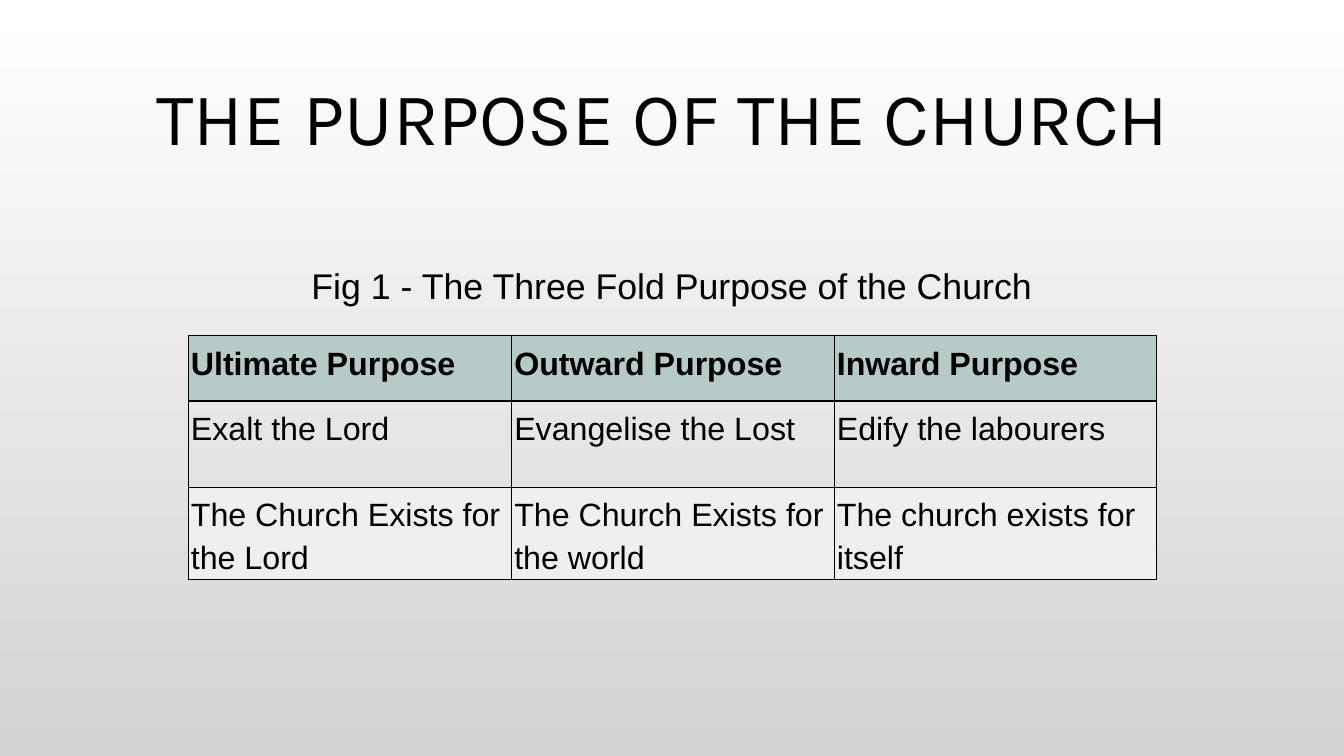
from dataclasses import dataclass

from lxml import etree
from pptx import Presentation
from pptx.dml.color import RGBColor
from pptx.enum import text
from pptx.oxml import ns
from pptx.util import Cm, Pt


@dataclass(frozen=True)
class Theme:
    ink: str = "000000"
    top: str = "FFFFFF"
    bottom: str = "D3D3D3"
    header: str = "B6CAC7"
    pale: str = "EFEFEF"
    title_font: str = "Karla"
    body_font: str = "Arial"
    title_size: float = 106.4
    caption_size: float = 51
    cell_size: float = 46
    thin: float = 1
    thick: float = 3


THEME = Theme()
INSET = Cm(0.15)
COLUMN_WIDTHS = (16.3, 16.26, 16.23)
ROW_HEIGHTS = (4.85, 3.3, 4.34, 0.76)  # the last row grows to fit its text
CAPTION = "Fig 1 - The Three Fold Purpose of the Church"
# Each row: texts, fill, bold, top border, bottom border
PURPOSES = (
    (("Ultimate Purpose", "Outward Purpose", "Inward Purpose"),
     THEME.header, True, THEME.thin, THEME.thick),
    (("Exalt the Lord", "Evangelise the Lost", "Edify the labourers"),
     None, False, THEME.thick, THEME.thin),
    (("The Church Exists for the Lord", "The Church Exists for the world",
      "The church exists for itself"),
     THEME.pale, False, THEME.thin, THEME.thin),
)


def write(frame, words, *, size, font=THEME.body_font, bold=False,
          align=text.PP_ALIGN.LEFT, spacing=1.0, before=0):
    para = frame.paragraphs[0]
    para.alignment = align
    para.line_spacing = spacing
    para.space_before = Pt(before)
    span = para.add_run()
    span.text = words
    span.font.name = font
    span.font.size = Pt(size)
    span.font.bold = bold
    span.font.color.rgb = RGBColor.from_string(THEME.ink)


def set_insets(item):
    item.margin_left = item.margin_right = INSET
    item.margin_top = item.margin_bottom = INSET


def set_borders(cell, *, left=0, right=0, top=0, bottom=0):
    """Border widths are in points; zero means no line."""
    properties = cell._tc.get_or_add_tcPr()
    sides = (("L", left), ("R", right), ("T", top), ("B", bottom))
    for index, (side, width) in enumerate(sides):
        line = etree.Element(ns.qn(f"a:ln{side}"), w=str(Pt(width)))
        if width:
            fill = etree.SubElement(line, ns.qn("a:solidFill"))
            etree.SubElement(fill, ns.qn("a:srgbClr"), val=THEME.ink)
        else:
            etree.SubElement(line, ns.qn("a:noFill"))
        properties.insert(index, line)


def set_fill(cell, color):
    if color:
        cell.fill.solid()
        cell.fill.fore_color.rgb = RGBColor.from_string(color)
    else:
        cell.fill.background()


def paint_background(page):
    fill = page.background.fill
    fill.gradient()
    fill.gradient_angle = 270
    for stop, color in zip(fill.gradient_stops, (THEME.top, THEME.bottom)):
        stop.color.rgb = RGBColor.from_string(color)


def add_title(page, words):
    box = page.shapes.title
    box.left, box.top, box.width, box.height = Cm(4.7), Cm(2.64), Cm(58.34), Cm(6.35)
    frame = box.text_frame
    frame.auto_size = text.MSO_AUTO_SIZE.NONE
    frame.word_wrap = True
    frame.vertical_anchor = text.MSO_ANCHOR.MIDDLE
    set_insets(frame)
    write(frame, words, size=THEME.title_size, font=THEME.title_font,
          align=text.PP_ALIGN.CENTER)


def add_purpose_table(page):
    table = page.shapes.add_table(
        len(ROW_HEIGHTS), len(COLUMN_WIDTHS), Cm(9.47), Cm(12.07),
        Cm(sum(COLUMN_WIDTHS)), Cm(sum(ROW_HEIGHTS))).table
    table.first_row = table.horz_banding = False
    for column, width in zip(table.columns, COLUMN_WIDTHS):
        column.width = Cm(width)
    for row, height in zip(table.rows, ROW_HEIGHTS):
        row.height = Cm(height)

    # Caption across the first row
    for cell in table.rows[0].cells:
        set_insets(cell)
        set_fill(cell, None)
        set_borders(cell, bottom=THEME.thin)
    caption = table.cell(0, 0)
    caption.merge(table.cell(0, len(COLUMN_WIDTHS) - 1))
    caption.vertical_anchor = text.MSO_ANCHOR.MIDDLE
    write(caption.text_frame, CAPTION, size=THEME.caption_size,
          align=text.PP_ALIGN.CENTER, before=8)

    # Headings and purposes
    for number, (words, color, bold, top, bottom) in enumerate(PURPOSES, 1):
        for cell, entry in zip(table.rows[number].cells, words):
            set_insets(cell)
            set_fill(cell, color)
            set_borders(cell, left=THEME.thin, right=THEME.thin,
                        top=top, bottom=bottom)
            write(cell.text_frame, entry, size=THEME.cell_size, bold=bold,
                  spacing=1.2)


def main():
    deck = Presentation()
    deck.slide_width, deck.slide_height = Cm(67.74), Cm(38.1)
    page = deck.slides.add_slide(deck.slide_layouts[5])
    paint_background(page)
    add_title(page, "THE PURPOSE OF THE CHURCH ")
    add_purpose_table(page)
    deck.save("out.pptx")


if __name__ == "__main__":
    main()
